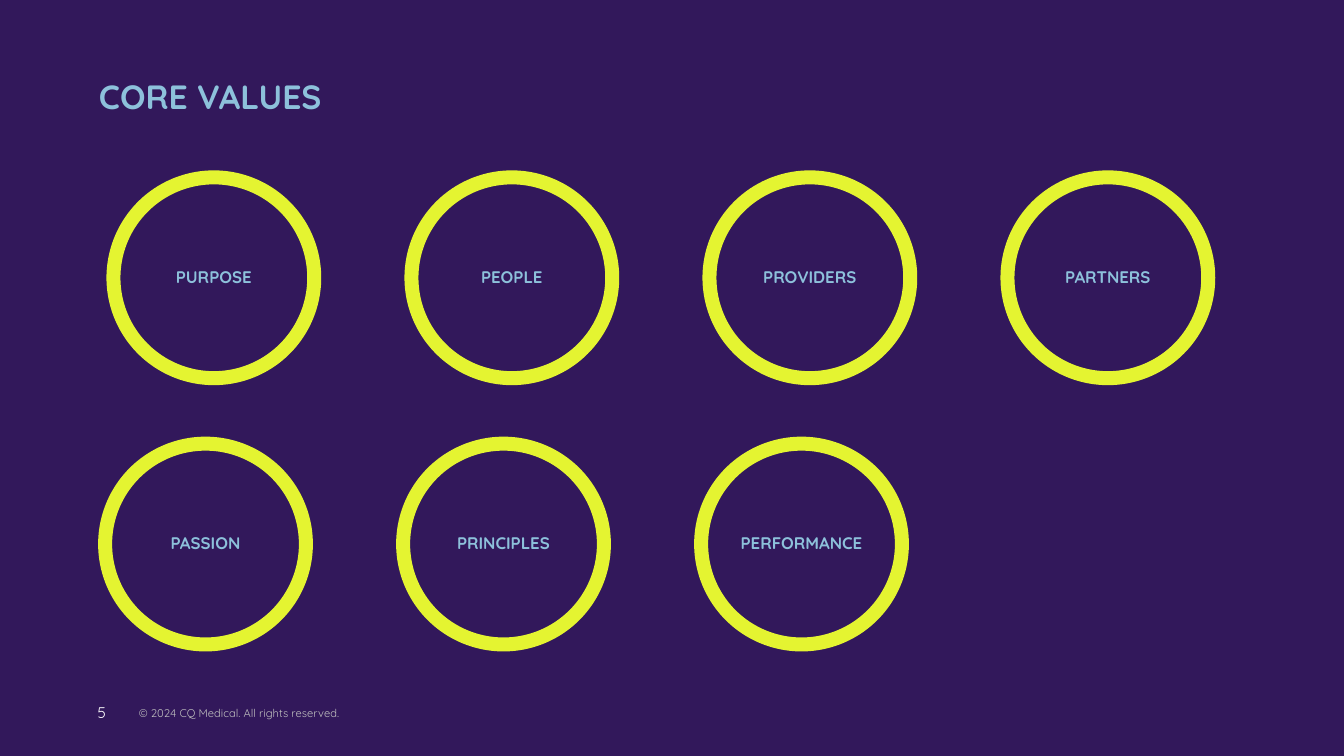
from dataclasses import dataclass

from pptx import Presentation
from pptx.dml.color import RGBColor
from pptx.enum.shapes import MSO_SHAPE
from pptx.enum.text import MSO_ANCHOR, MSO_AUTO_SIZE, PP_ALIGN
from pptx.util import Cm, Pt


@dataclass(frozen=True)
class Theme:
    font: str = "Quicksand"
    background: str = "32185B"
    heading: str = "8DC1DB"
    ring: str = "E4F431"
    number: str = "FFFFFF"
    copyright: str = "BFBFBF"
    title_size: int = 24
    label_size: int = 12
    number_size: int = 11
    copyright_size: int = 8
    ring_width: int = 10


class SlideBuilder:
    def __init__(self, presentation, theme):
        self.theme = theme
        self.slide = presentation.slides.add_slide(presentation.slide_layouts[5])
        fill = self.slide.background.fill
        fill.solid()
        fill.fore_color.rgb = RGBColor.from_string(theme.background)

    def set_text(self, shape, text, size, color, bold=False, align=PP_ALIGN.LEFT):
        frame = shape.text_frame
        frame.text = text
        frame.word_wrap = True
        frame.auto_size = MSO_AUTO_SIZE.NONE
        paragraph = frame.paragraphs[0]
        paragraph.alignment = align
        font = paragraph.font
        font.name = self.theme.font
        font.size = Pt(size)
        font.bold = bold
        font.color.rgb = RGBColor.from_string(color)
        return paragraph

    def title(self, text, left, top, width, height):
        shape = self.slide.shapes.title
        shape.left, shape.top = Cm(left), Cm(top)
        shape.width, shape.height = Cm(width), Cm(height)
        self.set_text(shape, text, self.theme.title_size, self.theme.heading, bold=True)
        shape.text_frame.vertical_anchor = MSO_ANCHOR.TOP

    def text(self, text, left, top, width, height, size, color):
        shape = self.slide.shapes.add_textbox(Cm(left), Cm(top), Cm(width), Cm(height))
        self.set_text(shape, text, size, color)

    def ring(self, label, left, top, diameter):
        shape = self.slide.shapes.add_shape(
            MSO_SHAPE.OVAL, Cm(left), Cm(top), Cm(diameter), Cm(diameter))
        shape.shadow.inherit = False
        shape.fill.background()
        shape.line.color.rgb = RGBColor.from_string(self.theme.ring)
        shape.line.width = Pt(self.theme.ring_width)
        paragraph = self.set_text(shape, label, self.theme.label_size, self.theme.heading,
                                  bold=True, align=PP_ALIGN.CENTER)
        paragraph.line_spacing = 0.9
        frame = shape.text_frame
        frame.vertical_anchor = MSO_ANCHOR.MIDDLE
        frame.margin_left = frame.margin_right = 0


RING_DIAMETER = 5.06
RING_PITCH = 7.51
VALUE_ROWS = [  # left, top, labels
    (2.86, 4.47, ["PURPOSE", "PEOPLE", "PROVIDERS", "PARTNERS"]),
    (2.65, 11.18, ["PASSION", "PRINCIPLES", "PERFORMANCE"]),
]


def main():
    presentation = Presentation()
    presentation.slide_width, presentation.slide_height = Cm(33.87), Cm(19.05)
    theme = Theme()
    builder = SlideBuilder(presentation, theme)

    builder.text("© 2024 CQ Medical. All rights reserved.", 3.25, 17.68, 22.53, 1.45,
                 theme.copyright_size, theme.copyright)
    builder.title("CORE VALUES", 2.24, 1.78, 27.03, 3.23)
    builder.text("5", 2.21, 17.6, 1.7, 1.02, theme.number_size, theme.number)

    for left, top, labels in VALUE_ROWS:
        for column, label in enumerate(labels):
            builder.ring(label, left + column * RING_PITCH, top, RING_DIAMETER)

    presentation.save("out.pptx")


if __name__ == "__main__":
    main()
